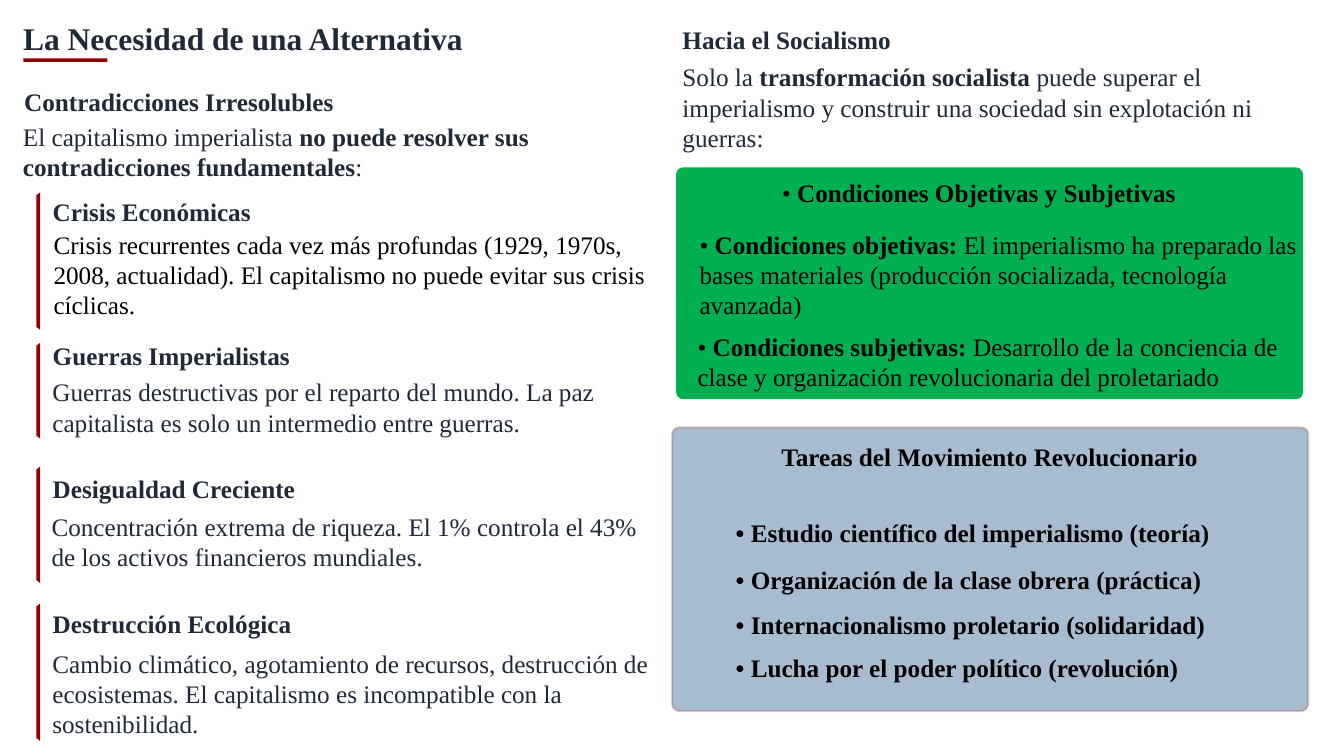
from lxml import etree
from pptx import Presentation
from pptx.dml.color import RGBColor
from pptx.enum.shapes import MSO_SHAPE
from pptx.enum.text import MSO_ANCHOR
from pptx.oxml.ns import qn
from pptx.util import Cm, Pt

RECT, ROUNDED = MSO_SHAPE.RECTANGLE, MSO_SHAPE.ROUNDED_RECTANGLE
MIDDLE = MSO_ANCHOR.MIDDLE
FONT = "Times New Roman"
COLORS = {"ink": "1F2937", "black": "000000", "red": "8B0000",
          "green": "00B050", "blue": "5881A4"}

prs = Presentation()
prs.slide_width, prs.slide_height = Cm(33.87), Cm(19.05)
s = prs.slides.add_slide(prs.slide_layouts[5])


def write(box, x, y, w, h, text, color="ink", size=18, spacing=1.0):
    """Place a box and fill it; ** switches bold on and off."""
    box.left, box.top, box.width, box.height = Cm(x), Cm(y), Cm(w), Cm(h)
    tf = box.text_frame
    tf.word_wrap = True
    tf.vertical_anchor = MIDDLE
    tf.margin_left = tf.margin_right = tf.margin_top = tf.margin_bottom = 0
    p = tf.paragraphs[0]
    p.line_spacing = spacing
    for i, part in enumerate(text.split("**")):
        if part:
            r = p.add_run()
            r.text = part
            r.font.name, r.font.size, r.font.bold = FONT, Pt(size), i % 2 == 1
            r.font.color.rgb = RGBColor.from_string(COLORS[color])


def paint(sp, color):
    sp.shadow.inherit = False
    sp.fill.solid()
    sp.fill.fore_color.rgb = RGBColor.from_string(COLORS[color])
    sp.line.fill.background()
    return sp


# Title and its underline
title = s.shapes.title
write(title, 0.58, 0.56, 32.51, 0.89, "**La Necesidad de una Alternativa**",
      size=22.5, spacing=0.9)
title.text_frame.paragraphs[0].alignment = 1
paint(s.shapes.add_shape(RECT, Cm(0.59), Cm(1.47), Cm(2.12), Cm(0.09)), "red")

# Panels: left, top, width, height, corner, colour
panels = []
for x, y, w, h, corner, color in [
        (17.04, 4.22, 15.8, 5.84, 0.03, "green"),
        (16.94, 10.77, 16.03, 7.15, 0.025, "blue")]:
    sp = s.shapes.add_shape(ROUNDED, Cm(x), Cm(y), Cm(w), Cm(h))
    sp.adjustments[0] = corner
    panels.append(paint(sp, color))

# Translucent fill and outline of the tasks panel
tasks_panel = panels[1]
tasks_panel.line.color.rgb = RGBColor.from_string(COLORS["red"])
tasks_panel.line.width = Pt(1.53)
for fmt, alpha in zip(tasks_panel._element.spPr.iter(qn("a:srgbClr")), (52, 20)):
    etree.SubElement(fmt, qn("a:alpha")).set("val", str(alpha * 1000))

# Left column: contradictions, each with a bar rounded on its left side
contradictions = [
    # bar top, bar height, heading top, body left, body top, body height
    (4.85, 3.46, 4.95, 1.35, 5.66, 2.51, "black", "Crisis Económicas",
     "Crisis recurrentes cada vez más profundas (1929, 1970s, 2008, actualidad). "
     "El capitalismo no puede evitar sus crisis cíclicas."),
    (8.64, 2.41, 8.59, 1.32, 9.47, 1.57, "ink", "Guerras Imperialistas",
     "Guerras destructivas por el reparto del mundo. "
     "La paz capitalista es solo un intermedio entre guerras."),
    (11.76, 2.93, 11.94, 1.3, 12.83, 1.63, "ink", "Desigualdad Creciente",
     "Concentración extrema de riqueza. "
     "El 1% controla el 43% de los activos financieros mundiales."),
    (15.21, 3.46, 15.34, 1.32, 16.33, 2.29, "ink", "Destrucción Ecológica",
     "Cambio climático, agotamiento de recursos, destrucción de ecosistemas. "
     "El capitalismo es incompatible con la sostenibilidad."),
]
write(s.shapes.add_textbox(0, 0, 0, 0), 0.61, 2.16, 16.05, 0.71,
      "**Contradicciones Irresolubles**", spacing=1.1)
write(s.shapes.add_textbox(0, 0, 0, 0), 0.58, 3.05, 15.95, 1.55,
      "El capitalismo imperialista **no puede resolver sus "
      "contradicciones fundamentales**:")
bar_left, bar_right, bevel = 0.92, 1.01, 0.07
for top, height, head_y, body_x, body_y, body_h, color, head, body in contradictions:
    bottom = top + height
    outline = [(bar_right, bottom), (bar_left, bottom - bevel),
               (bar_left, top + bevel)]
    fb = s.shapes.build_freeform(Cm(bar_right), Cm(top))
    fb.add_line_segments([(Cm(x), Cm(y)) for x, y in outline])
    paint(fb.convert_to_shape(), "red")
    write(s.shapes.add_textbox(0, 0, 0, 0), 1.33, head_y, 14.73, 0.53,
          f"**{head}**", spacing=1.3)
    write(s.shapes.add_textbox(0, 0, 0, 0), body_x, body_y, 15.16, body_h,
          body, color)

# Right column: introduction
write(s.shapes.add_textbox(0, 0, 0, 0), 17.2, 0.61, 16.05, 0.71,
      "**Hacia el Socialismo**", spacing=1.1)
write(s.shapes.add_textbox(0, 0, 0, 0), 17.2, 1.52, 15.95, 2.36,
      "Solo la **transformación socialista** puede superar el imperialismo "
      "y construir una sociedad sin explotación ni guerras:")

# Right column: text on the two panels
panel_texts = [
    (19.71, 4.29, 12.8, 0.91, 1.3, "• **Condiciones Objetivas y Subjetivas**"),
    (17.63, 5.61, 15.24, 2.62, 1.0,
     "• **Condiciones objetivas:** El imperialismo ha preparado las bases "
     "materiales (producción socializada, tecnología avanzada)"),
    (17.58, 8.15, 15.09, 1.91, 1.0,
     "• **Condiciones subjetivas:** Desarrollo de la conciencia de clase "
     "y organización revolucionaria del proletariado"),
    (19.69, 11.07, 10.87, 0.66, 1.3, "**Tareas del Movimiento Revolucionario**"),
    (18.54, 12.62, 13, 1.57, 1.0,
     "**• Estudio científico del imperialismo (teoría)**"),
    (18.54, 13.92, 13, 1.35, 1.0,
     "**• Organización de la clase obrera (práctica)**"),
    (18.54, 15.19, 13, 1.07, 1.0,
     "**• Internacionalismo proletario (solidaridad)**"),
    (18.54, 16.33, 13, 0.99, 1.0,
     "**• Lucha por el poder político (revolución)**"),
]
for x, y, w, h, spacing, text in panel_texts:
    write(s.shapes.add_textbox(0, 0, 0, 0), x, y, w, h, text, "black",
          spacing=spacing)

prs.save("out.pptx")
